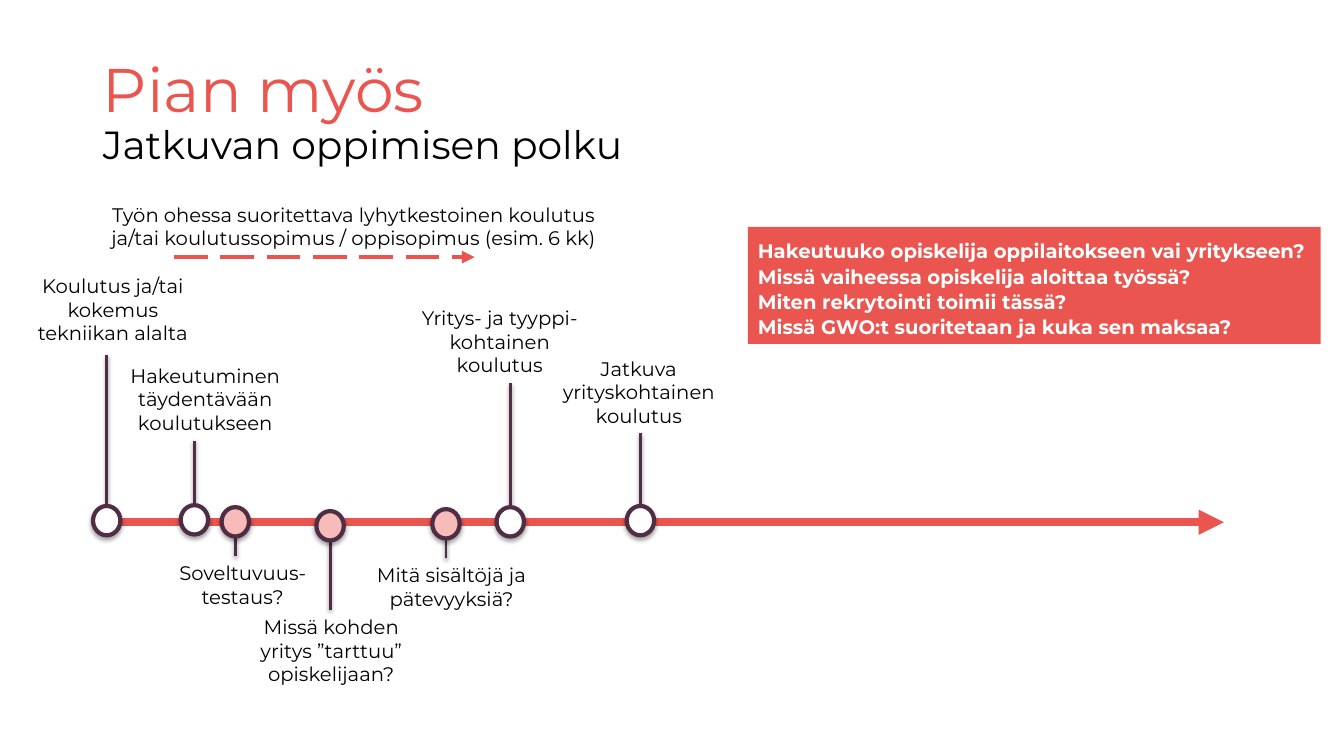
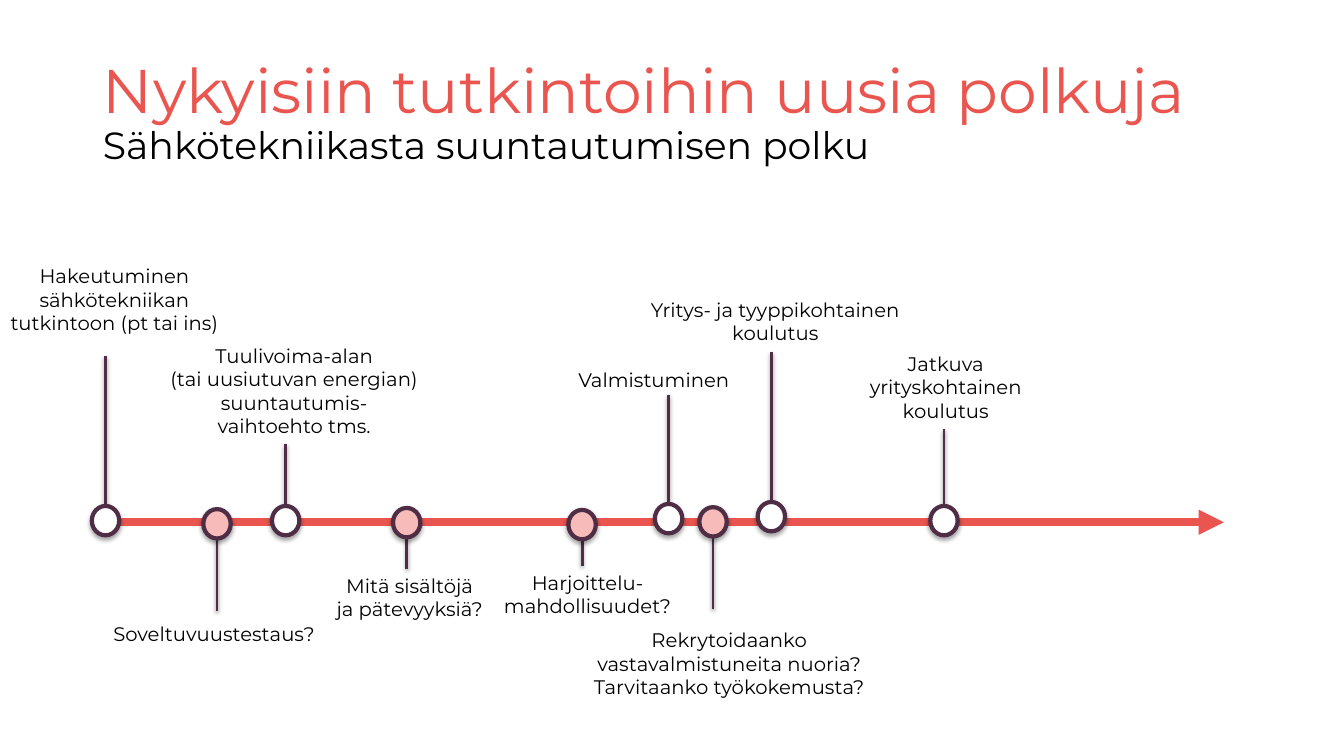
from dataclasses import dataclass

from lxml.etree import SubElement
from pptx import Presentation
from pptx.dml.color import RGBColor
from pptx.enum.dml import MSO_LINE
from pptx.enum.shapes import MSO_CONNECTOR, MSO_SHAPE
from pptx.enum.text import MSO_ANCHOR, MSO_AUTO_SIZE, PP_ALIGN
from pptx.oxml.ns import qn
from pptx.util import Cm, Pt

COLORS = {
    "coral": "EA564F",
    "pink": "F7BBB9",
    "plum": "502F46",
    "ring": "4F2D45",
    "white": "FFFFFF",
    "black": "000000",
}
FONT = "Montserrat"
TITLE_ONLY = 5
AXIS_Y = 13.16
MARKER_WIDTH, MARKER_HEIGHT = 0.69, 0.74


@dataclass
class Label:
    text: str
    left: float
    top: float
    width: float
    lines: int


@dataclass
class Stop:
    x: float
    y: float
    tip: float
    label: Label


LEARNING_STOPS = [
    Stop(2.69, 13.12, 8.94, Label("Koulutus ja/tai kokemus\vtekniikan alalta", -0.15, 6.78, 5.99, 3)),
    Stop(4.9, 13.1, 11.1, Label("Hakeutuminen\vtäydentävään\vkoulutukseen", 2.95, 9.04, 4.45, 3)),
    Stop(5.93, 13.15, 14.02, Label("Soveltuvuus-\vtestaus?", 4.12, 14.02, 4, 2)),
    Stop(8.32, 13.25, 15.37, Label("Missä kohden\vyritys ”tarttuu”\vopiskelijaan?", 6.1, 15.37, 4.5, 3)),
    Stop(11.24, 13.2, 14.07, Label("Mitä sisältöjä ja pätevyyksiä?", 8.13, 14.07, 6.5, 2)),
    Stop(12.86, 13.15, 9.65, Label("Yritys- ja tyyppi-\vkohtainen\vkoulutus", 9.6, 7.59, 5.99, 3)),
    Stop(16.14, 13.12, 10.92, Label("Jatkuva\vyrityskohtainen\vkoulutus", 13.79, 8.86, 4.62, 3)),
]
ELECTRICAL_STOPS = [
    Stop(2.66, 13.12, 8.97, Label("Hakeutuminen sähkötekniikan tutkintoon (pt tai ins)", -0.53, 6.53, 6.83, 3)),
    Stop(5.47, 13.2, 15.39, Label("Soveltuvuustestaus?", 2.4, 15.54, 6, 1)),
    Stop(7.2, 13.12, 11.18,
         Label("Tuulivoima-alan\v(tai uusiutuvan energian)\nsuuntautumis-\nvaihtoehto tms.", 3.81, 8.53, 7.21, 4)),
    Stop(10.25, 13.17, 14.33, Label("Mitä sisältöjä\vja pätevyyksiä?", 7.24, 14.33, 6.17, 2)),
    Stop(14.67, 13.22, 14.25, Label("Harjoittelu-\vmahdollisuudet?", 12.32, 14.25, 4.98, 2)),
    Stop(16.85, 13.07, 9.96, Label("Valmistuminen", 14.22, 9.14, 4.52, 1)),
    Stop(17.97, 13.15, 15.34,
         Label("Rekrytoidaanko\vvastavalmistuneita nuoria?\nTarvitaanko työkokemusta?", 14.66, 15.7, 7.44, 3)),
    Stop(19.44, 13.02, 8.86, Label("Yritys- ja tyyppikohtainen\vkoulutus", 16.1, 7.37, 6.88, 2)),
    Stop(23.79, 13.12, 10.8, Label("Jatkuva\vyrityskohtainen\vkoulutus", 21.64, 8.74, 4.39, 3)),
]
DURATION = Label(
    "Työn ohessa suoritettava lyhytkestoinen koulutus\vja/tai koulutussopimus / oppisopimus (esim. 6 kk)",
    1.17, 4.98, 15.49, 2)
QUESTIONS = "\n".join([
    "Hakeutuuko opiskelija oppilaitokseen vai yritykseen?",
    "Missä vaiheessa opiskelija aloittaa työssä?",
    "Miten rekrytointi toimii tässä?",
    "Missä GWO:t suoritetaan ja kuka sen maksaa?",
])


def rgb(name):
    return RGBColor.from_string(COLORS[name])


def format_span(span, size, color, bold=False):
    span.font.name = FONT
    span.font.size = Pt(size)
    span.font.bold = bold
    span.font.color.rgb = rgb(color)


def add_title(page, title, subtitle, subtitle_size, width):
    box = page.shapes.title
    box.left, box.top, box.width, box.height = Cm(2.34), Cm(1.02), Cm(width), Cm(3.68)
    frame = box.text_frame
    frame.word_wrap = True
    frame.auto_size = MSO_AUTO_SIZE.NONE
    frame.vertical_anchor = MSO_ANCHOR.MIDDLE
    para = frame.paragraphs[0]
    para.text = f"{title}\v{subtitle}"
    para.alignment = PP_ALIGN.LEFT
    para.line_spacing = 0.9
    format_span(para.runs[0], 44, "coral")
    format_span(para.runs[1], subtitle_size, "black")


def add_label(page, label):
    height = 0.26 + 0.6 * label.lines
    box = page.shapes.add_textbox(Cm(label.left), Cm(label.top), Cm(label.width), Cm(height))
    frame = box.text_frame
    frame.word_wrap = True
    frame.text = label.text
    for para in frame.paragraphs:
        para.alignment = PP_ALIGN.CENTER
        for span in para.runs:
            format_span(span, 14, "black")


def add_line(page, start, end, color, width):
    line = page.shapes.add_connector(MSO_CONNECTOR.STRAIGHT, *map(Cm, start + end))
    line.line.color.rgb = rgb(color)
    line.line.width = Pt(width)
    effects = SubElement(line._element.spPr, qn("a:effectLst"))
    return line, effects


def add_arrow(page, start, end, width, dash=None):
    arrow, _ = add_line(page, start, end, "coral", width)
    if dash is not None:
        arrow.line.dash_style = dash
    SubElement(arrow.line._get_or_add_ln(), qn("a:tailEnd"), type="triangle")


def add_shadow(effects, distance, opacity):
    shadow = SubElement(effects, qn("a:outerShdw"), blurRad=str(Pt(3.1)), dist=str(Pt(distance)),
                        dir="5400000", rotWithShape="0")
    color = SubElement(shadow, qn("a:srgbClr"), val=COLORS["black"])
    SubElement(color, qn("a:alpha"), val=str(opacity * 1000))


def add_stop(page, stop):
    _, effects = add_line(page, (stop.x, stop.tip), (stop.x, stop.y), "plum", 2)
    add_shadow(effects, 1.6, 38)
    marker = page.shapes.add_shape(
        MSO_SHAPE.OVAL, Cm(stop.x - MARKER_WIDTH / 2), Cm(stop.y - MARKER_HEIGHT / 2),
        Cm(MARKER_WIDTH), Cm(MARKER_HEIGHT))
    marker.fill.solid()
    marker.fill.fore_color.rgb = rgb("white" if stop.tip < AXIS_Y else "pink")
    marker.line.color.rgb = rgb("ring")
    marker.line.width = Pt(3)
    marker.shadow.inherit = False
    add_shadow(marker._element.spPr.find(qn("a:effectLst")), 1.8, 35)
    add_label(page, stop.label)


def add_questions(page):
    panel = page.shapes.add_shape(MSO_SHAPE.RECTANGLE, Cm(18.85), Cm(5.72), Cm(14.43), Cm(2.95))
    panel.shadow.inherit = False
    panel.fill.solid()
    panel.fill.fore_color.rgb = rgb("coral")
    panel.line.fill.background()
    frame = panel.text_frame
    frame.word_wrap = True
    frame.vertical_anchor = MSO_ANCHOR.BOTTOM
    frame.text = QUESTIONS
    for para in frame.paragraphs:
        para.alignment = PP_ALIGN.LEFT
        para.line_spacing = 0.9
        para.space_after = Pt(3)
        format_span(para.runs[0], 14, "white", bold=True)


def add_path_page(deck, title, subtitle, subtitle_size, title_width, stops):
    page = deck.slides.add_slide(deck.slide_layouts[TITLE_ONLY])
    add_title(page, title, subtitle, subtitle_size, title_width)
    add_arrow(page, (2.34, AXIS_Y), (30.84, AXIS_Y), 6)
    for stop in stops:
        add_stop(page, stop)
    return page


def main():
    deck = Presentation()
    deck.slide_width, deck.slide_height = Cm(33.87), Cm(19.05)
    page = add_path_page(deck, "Pian myös", "Jatkuvan oppimisen polku", 28, 30.4, LEARNING_STOPS)
    add_label(page, DURATION)
    add_arrow(page, (4.39, 6.48), (11.96, 6.48), 3, MSO_LINE.LONG_DASH)
    add_questions(page)
    add_path_page(deck, "Nykyisiin tutkintoihin uusia polkuja", "Sähkötekniikasta suuntautumisen polku",
                  27, 31.32, ELECTRICAL_STOPS)
    deck.save("out.pptx")


if __name__ == "__main__":
    main()
